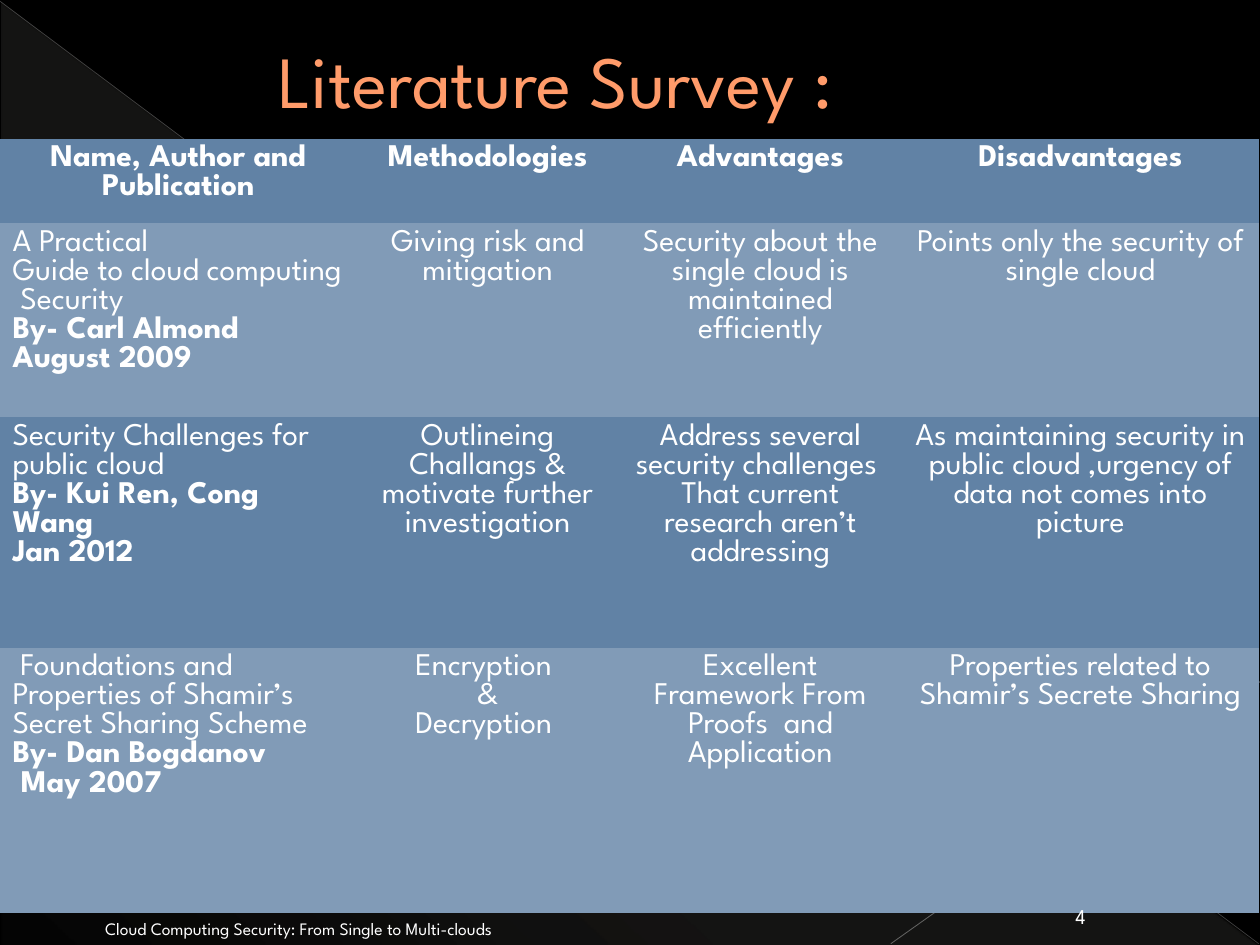
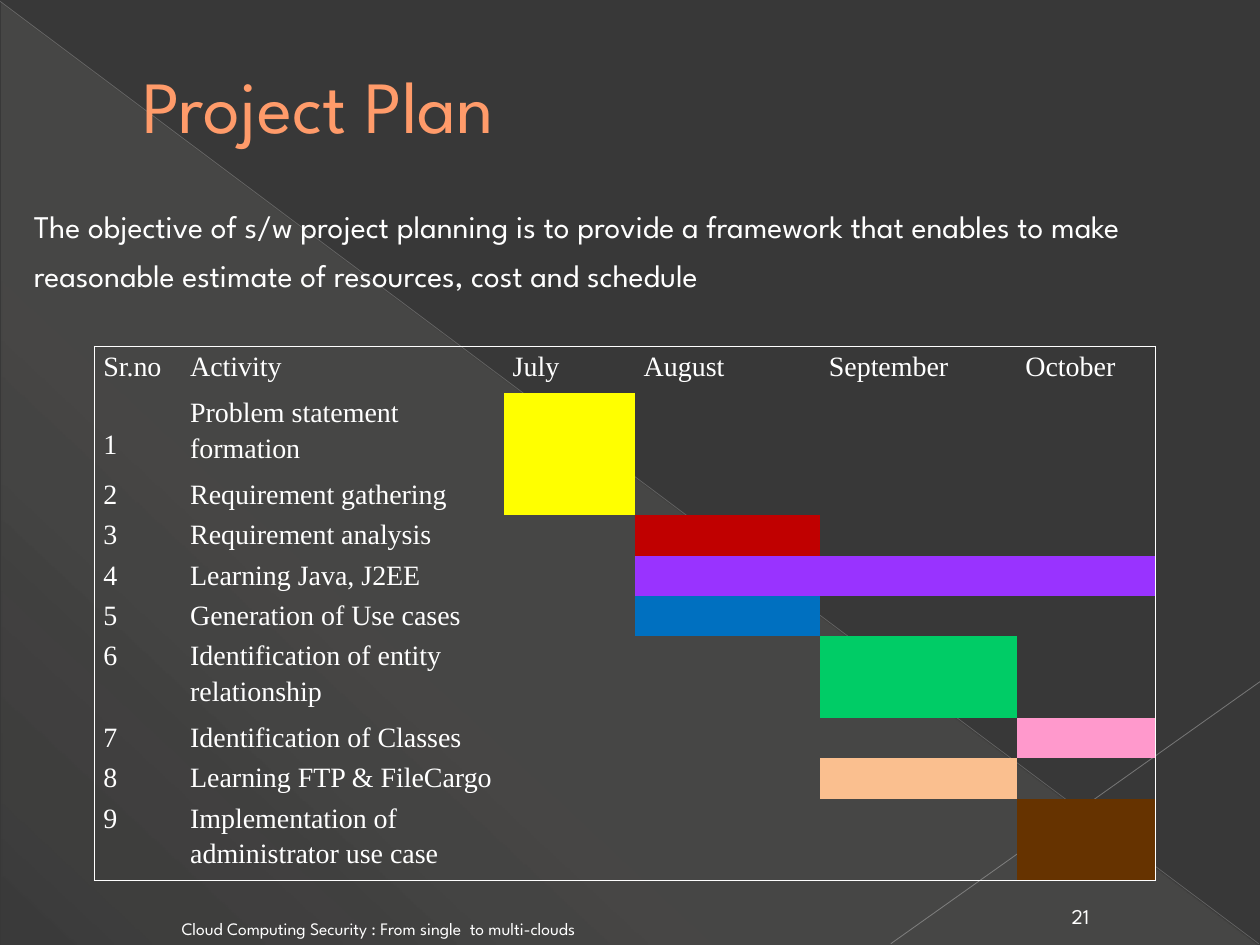
from dataclasses import dataclass

from pptx import Presentation
from pptx.dml.color import RGBColor
from pptx.enum.shapes import MSO_CONNECTOR, MSO_SHAPE
from pptx.enum.text import MSO_ANCHOR, MSO_AUTO_SIZE, PP_ALIGN
from pptx.oxml import parse_xml
from pptx.oxml.ns import nsdecls, qn
from pptx.util import Inches, Pt

NO_GRID = "{2D5ABB26-0587-4C30-8999-92F81FD0307C}"
LEFT, MID, RIGHT = PP_ALIGN.LEFT, PP_ALIGN.CENTER, PP_ALIGN.RIGHT


@dataclass(frozen=True)
class Theme:
    face: str = "League Spartan"
    serif: str = "Times New Roman"
    white: str = "FFFFFF"
    title: str = "FF9B6A"
    edge: str = "A65806"
    haze: str = "E3DED1"
    black: str = "000000"
    gray: str = "383838"
    dark: str = "6182A5"
    light: str = "819BB7"
    head: int = 42
    body: int = 18
    plan: int = 16
    page: int = 12
    foot: int = 10


def put(item, **vals):
    for name, val in vals.items():
        setattr(item, name, val)


def rgb(code):
    return RGBColor.from_string(code)


def line_xml(tag, code, width):
    return parse_xml(
        f'<a:{tag} {nsdecls("a")} w="{Pt(width)}"><a:solidFill>'
        f'<a:srgbClr val="{code}"/></a:solidFill></a:{tag}>')


class Deck:
    def __init__(self, theme):
        self.look = theme
        self.show = Presentation()
        put(self.show, slide_width=Inches(10), slide_height=Inches(7.5))
        self.slide = None

    def start(self, back, title, box):
        """Add a slide with its backdrop and its title in front."""
        self.slide = self.show.slides.add_slide(self.show.slide_layouts[5])
        fill = self.slide.background.fill
        fill.solid()
        fill.fore_color.rgb = rgb(back)
        self.wedge()
        self.ray((0, 0.01), (9.99, 7.49), "B6B6B6", 0.39, 35)
        self.ray((10, 5.41), (7.07, 7.49), "BFBFBF", 0.47, 45)
        self.title(title, box)

    def wedge(self):
        shape = self.slide.shapes.add_shape(
            MSO_SHAPE.RIGHT_TRIANGLE, *map(Inches, (0.01, 0.02, 9.98, 7.48)))
        shape.shadow.inherit = False
        shape.line.fill.background()
        stops = "".join(
            f'<a:gs pos="{pos * 1000}"><a:srgbClr val="{self.look.haze}">'
            f'<a:alpha val="{alpha * 1000}"/></a:srgbClr></a:gs>'
            for pos, alpha in ((0, 10), (70, 8), (100, 1)))
        fill = parse_xml(
            f'<a:gradFill {nsdecls("a")}><a:gsLst>{stops}</a:gsLst>'
            f'<a:lin ang="{133 * 60000}" scaled="0"/></a:gradFill>')
        shape._element.spPr.find(qn("a:prstGeom")).addnext(fill)

    def ray(self, tail, tip, code, width, alpha):
        line = self.slide.shapes.add_connector(
            MSO_CONNECTOR.STRAIGHT, *map(Inches, (*tail, *tip)))
        line.line.color.rgb = rgb(code)
        line.line.width = Pt(width)
        props = line._element.spPr
        tint = next(props.iter(qn("a:srgbClr")))
        tint.append(parse_xml(
            f'<a:alpha {nsdecls("a")} val="{alpha * 1000}"/>'))
        props.append(parse_xml(f'<a:effectLst {nsdecls("a")}/>'))

    def title(self, text, box):
        shape = self.slide.shapes.title
        self.slide.shapes._spTree.append(shape._element)
        sides = ("left", "top", "width", "height")
        put(shape, **dict(zip(sides, map(Inches, box))))
        put(shape.text_frame, auto_size=MSO_AUTO_SIZE.NONE,
            vertical_anchor=MSO_ANCHOR.MIDDLE)
        run = self.words(shape.text_frame, [text], self.look.head,
                         code=self.look.title)
        run._r.get_or_add_rPr().insert(0, line_xml("ln", self.look.edge, 0.5))
        pad = shape.text_frame.paragraphs[0]._p.get_or_add_pPr()
        for name, val in {"marL": Inches(0.53), "indent": 0}.items():
            pad.set(name, str(val))

    def words(self, frame, parts, size, align=LEFT, code=None, face=None,
              bold=(), space=None):
        """Fill a frame with paragraphs; bold holds the bold ones' indexes."""
        for num, part in enumerate(parts):
            para = frame.add_paragraph() if num else frame.paragraphs[0]
            put(para, alignment=align, line_spacing=space)
            run = para.add_run()
            run.text = part
            put(run.font, size=Pt(size), name=face or self.look.face,
                bold=num in bold)
            run.font.color.rgb = rgb(code or self.look.white)
        return run

    def text(self, line, box, size, align=LEFT, anchor=MSO_ANCHOR.BOTTOM,
             space=None):
        frame = self.slide.shapes.add_textbox(*map(Inches, box)).text_frame
        put(frame, word_wrap=True, vertical_anchor=anchor)
        self.words(frame, [line], size, align, space=space)

    def footer(self, line, box, page):
        self.text(line, box, self.look.foot, RIGHT)
        self.text(page, (8.3, 7.09, 0.55, 0.33), self.look.page, MID)

    def grid(self, spot, cols, rows):
        size = (sum(cols), sum(rows))
        table = self.slide.shapes.add_table(
            len(rows), len(cols), *map(Inches, (*spot, *size))).table
        put(table, first_row=False, horz_banding=False)
        table._tbl.tblPr.find(qn("a:tableStyleId")).text = NO_GRID
        for col, width in zip(table.columns, cols):
            col.width = Inches(width)
        for row, height in zip(table.rows, rows):
            row.height = Inches(height)
        return table

    def paint(self, cell, code=None):
        if code:
            cell.fill.solid()
            cell.fill.fore_color.rgb = rgb(code)
        else:
            cell.fill.background()

    def frame(self, table):
        """Draw a border round the outside of a table."""
        low, far = len(table.rows) - 1, len(table.columns) - 1
        for r in range(low + 1):
            for c in range(far + 1):
                edges = {"lnL": c == 0, "lnR": c == far,
                         "lnT": r == 0, "lnB": r == low}
                tags = [tag for tag, on in edges.items() if on]
                props = table.cell(r, c)._tc.get_or_add_tcPr()
                for num, tag in enumerate(tags):
                    props.insert(num, line_xml(tag, self.look.white, 1))


SURVEY = [
    [["Name, Author and Publication"], ["Methodologies"], ["Advantages"],
     ["Disadvantages"]],
    [["A Practical", "Guide to cloud computing  Security",
      "By- Carl Almond", "August 2009"],
     ["Giving risk and mitigation"],
     ["Security about the single cloud is maintained efficiently"],
     ["Points only the security of single cloud"]],
    [["Security Challenges for public cloud", "By- Kui Ren, Cong Wang",
      "Jan 2012"],
     ["Outlineing Challangs & motivate further investigation"],
     ["Address several security challenges ",
      "That current research aren’t addressing"],
     ["As maintaining security in public cloud ,urgency of data not comes "
      "into picture"]],
    [[" Foundations and Properties of Shamir’s Secret Sharing Scheme",
      "By- Dan Bogdanov", " May 2007"],
     ["Encryption ", "&", "Decryption "],
     ["Excellent Framework From Proofs  and Application"],
     ["Properties related to Shamir’s Secrete Sharing"]],
]

HEADS = ["Sr.no", "Activity", "July", "August", "September", "October"]
# Activity, bar colour, first and last column of the bar
TASKS = [
    ("Problem statement formation", "FFFF00", 2, 2),
    ("Requirement gathering", "FFFF00", 2, 2),
    ("Requirement analysis", "C00000", 3, 3),
    ("Learning Java, J2EE", "9933FF", 3, 5),
    ("Generation of Use cases", "0070C0", 3, 3),
    ("Identification of entity relationship", "00CC66", 4, 4),
    ("Identification of Classes", "FF99CC", 5, 5),
    ("Learning FTP & FileCargo", "FABF8F", 4, 4),
    ("Implementation of administrator use case", "663300", 5, 5),
]


def survey(deck):
    look = deck.look
    deck.start(look.black, "Literature Survey :", (1.58, 0, 8.2, 1.25))
    table = deck.grid((0, 1.1), (2.83, 2.08, 2.25, 2.83),
                      (0.67, 1.54, 1.83, 2.11))
    for r, row in enumerate(SURVEY):
        for c, parts in enumerate(row):
            cell = table.cell(r, c)
            deck.paint(cell, look.light if r % 2 else look.dark)
            last = len(parts)
            bold = (0,) if r == 0 else (last - 2, last - 1) if c == 0 else ()
            deck.words(cell.text_frame, parts, look.body,
                       MID if c or r == 0 else LEFT, bold=bold)
    deck.footer("Cloud Computing Security: From Single to Multi-clouds",
                (0, 6.98, 4, 0.52), "4")


def plan(deck):
    look = deck.look
    deck.start(look.gray, "Project Plan", (0.5, 0.33, 9, 0.99))
    tall, low = 0.65, 0.32
    table = deck.grid((0.75, 2.75), (0.69, 2.56, 1.04, 1.47, 1.56, 1.1),
                      (0.37, tall, *[low] * 4, tall, low, low, tall))
    lines = [HEADS] + [[str(num), task[0], "", "", "", ""]
                       for num, task in enumerate(TASKS, 1)]
    for r, line in enumerate(lines):
        for c, label in enumerate(line):
            cell = table.cell(r, c)
            put(cell, margin_left=Inches(0.07), margin_right=Inches(0.07),
                margin_top=0, margin_bottom=0)
            if label:
                deck.words(cell.text_frame, [label], look.plan,
                           face=look.serif, space=1.15)
            else:
                para = cell.text_frame.paragraphs[0]._p
                para.get_or_add_endParaRPr().set("sz", str(look.plan * 100))
            code, first, last = TASKS[r - 1][1:] if r else (None, 0, 0)
            deck.paint(cell, code if first <= c <= last else None)
    table.cell(1, 0).margin_top = Inches(0.25)
    deck.frame(table)
    deck.text("The objective of s/w project planning is to provide a framework "
              "that enables to make reasonable estimate of resources, cost and "
              "schedule", (0.17, 1.5, 9.5, 0.71), look.body,
              anchor=MSO_ANCHOR.TOP, space=1.3)
    deck.footer("Cloud Computing Security : From single  to multi-clouds",
                (0, 7.17, 4.66, 0.33), "21")


def main():
    deck = Deck(Theme())
    survey(deck)
    plan(deck)
    deck.show.save("out.pptx")


if __name__ == "__main__":
    main()
